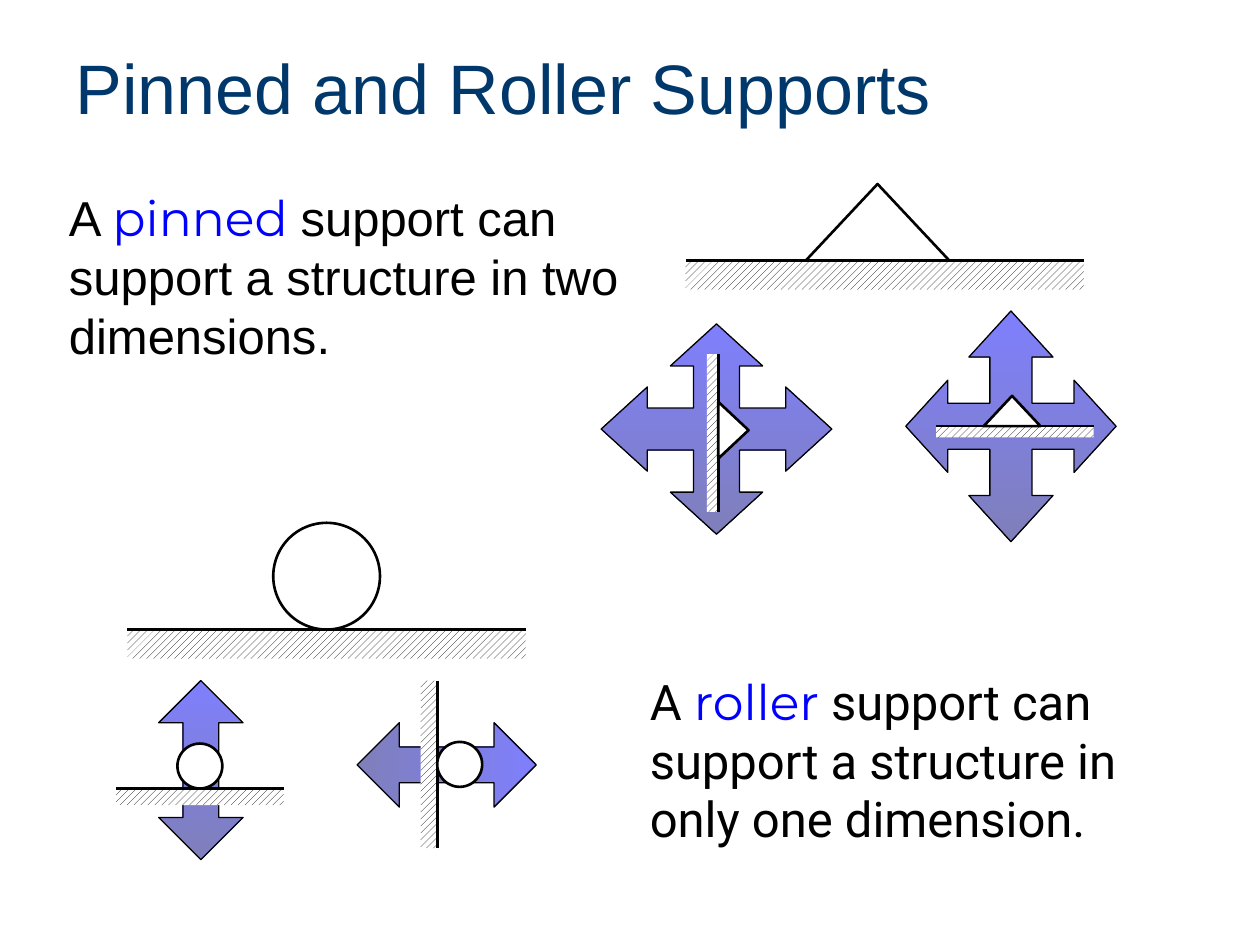
from dataclasses import dataclass

from lxml.etree import SubElement
from pptx import Presentation
from pptx.dml.color import RGBColor
from pptx.enum.dml import MSO_PATTERN
from pptx.enum.shapes import MSO_CONNECTOR, MSO_SHAPE
from pptx.enum.text import MSO_ANCHOR, MSO_AUTO_SIZE, PP_ALIGN
from pptx.oxml.ns import qn
from pptx.util import Cm, Pt


@dataclass(frozen=True)
class Theme:
    """Colours, type sizes and line widths of the slide."""
    title: RGBColor = RGBColor(0x00, 0x38, 0x6B)
    ink: RGBColor = RGBColor(0x00, 0x00, 0x00)
    paper: RGBColor = RGBColor(0xFF, 0xFF, 0xFF)
    term: RGBColor = RGBColor(0x00, 0x00, 0xFF)
    arrow_start: RGBColor = RGBColor(0x00, 0x00, 0xFF)
    arrow_end: RGBColor = RGBColor(0x00, 0x00, 0x76)
    arrow_alpha: str = "50000"
    title_size: Pt = Pt(40)
    text_size: Pt = Pt(28)
    text_leading: Pt = Pt(33.6)
    thin: Pt = Pt(0.75)
    thick: Pt = Pt(1.5)
    title_font: str = "Arial"
    term_font: str = "Montserrat"


@dataclass(frozen=True)
class Box:
    """A region of the slide in centimetres."""
    left: float
    top: float
    width: float
    height: float

    def lengths(self):
        """Return the four measures as slide lengths."""
        return Cm(self.left), Cm(self.top), Cm(self.width), Cm(self.height)


@dataclass(frozen=True)
class Prop:
    """A support's outline, sized and shifted as shares of its ground's length."""
    preset: MSO_SHAPE
    width: float
    height: float
    shift: float


THEME = Theme()
PIN = Prop(MSO_SHAPE.ISOSCELES_TRIANGLE, 0.36, 0.192, -0.018)
ROLLER = Prop(MSO_SHAPE.OVAL, 0.268, 0.268, 0)


def outline(shape, width):
    """Give a shape a plain dark line and no shadow."""
    shape.shadow.inherit = False
    shape.line.color.rgb = THEME.ink
    shape.line.width = width


def add_turnable(slide, preset, center, size, turned):
    """Add a preset shape around a centre, turned clockwise when asked."""
    (x, y), (width, height) = center, size
    box = Box(x - width / 2, y - height / 2, width, height)
    shape = slide.shapes.add_shape(preset, *box.lengths())
    shape.rotation = 90 if turned else 0
    return shape


def shade_arrow(arrow):
    """Fill a movement arrow with the translucent gradient."""
    arrow.fill.gradient()
    arrow.fill.gradient_angle = 270
    for stop, color in zip(arrow.fill.gradient_stops, (THEME.arrow_start, THEME.arrow_end)):
        stop.color.rgb = color
    for color in arrow.element.spPr.iter(qn("a:srgbClr")):
        SubElement(color, qn("a:alpha"), val=THEME.arrow_alpha)
    outline(arrow, THEME.thin)


def add_four_way_arrow(slide, box):
    """Draw a four-headed arrow that fills the box."""
    arm = [(0.5, 0), (0.3, 0.2), (0.4, 0.2), (0.4, 0.4), (0.2, 0.4), (0.2, 0.3)]
    corners = []
    for _ in range(4):
        corners += arm
        arm = [(y, 1 - x) for x, y in arm]
    points = [(Cm(box.left + x * box.width), Cm(box.top + y * box.height)) for x, y in corners]
    builder = slide.shapes.build_freeform(*points[0])
    builder.add_line_segments(points[1:], close=True)
    shade_arrow(builder.convert_to_shape())


def add_two_way_arrow(slide, box):
    """Draw a two-headed arrow along the longer side of the box."""
    center = box.left + box.width / 2, box.top + box.height / 2
    size = sorted((box.width, box.height))
    arrow = add_turnable(slide, MSO_SHAPE.UP_DOWN_ARROW, center, size, box.width > box.height)
    arrow.adjustments[0] = 0.5
    arrow.adjustments[1] = 0.425
    shade_arrow(arrow)


def add_support(slide, box, prop):
    """Draw a prop on hatched ground, with the ground along the longer side."""
    turned = box.height > box.width
    depth, length = sorted((box.width, box.height))
    prop_width, prop_height = prop.width * length, prop.height * length
    ground_depth = depth - prop_height

    def place(along, across):
        """Map a position along and across the ground to the slide."""
        if turned:
            return box.left + box.width - across, box.top + along
        return box.left + along, box.top + across

    ground = add_turnable(slide, MSO_SHAPE.RECTANGLE,
                          place(length / 2, depth - ground_depth / 2),
                          (length, ground_depth), turned)
    ground.shadow.inherit = False
    ground.fill.patterned()
    ground.fill.pattern = MSO_PATTERN.WIDE_UPWARD_DIAGONAL
    ground.fill.fore_color.rgb = THEME.ink
    ground.fill.back_color.rgb = THEME.paper
    ground.line.fill.background()

    ends = place(0, prop_height) + place(length, prop_height)
    surface = slide.shapes.add_connector(MSO_CONNECTOR.STRAIGHT, *map(Cm, ends))
    surface.line.color.rgb = THEME.ink
    surface.line.width = THEME.thick
    SubElement(surface.element.spPr, qn("a:effectLst"))

    body = add_turnable(slide, prop.preset,
                        place((0.5 + prop.shift) * length, prop_height / 2),
                        (prop_width, prop_height), turned)
    body.fill.solid()
    body.fill.fore_color.rgb = THEME.paper
    outline(body, THEME.thick)


def add_definition(slide, box, term, ending, font):
    """Write a sentence that highlights the term it defines."""
    frame = slide.shapes.add_textbox(*box.lengths()).text_frame
    frame.word_wrap = True
    frame.auto_size = MSO_AUTO_SIZE.SHAPE_TO_FIT_TEXT
    sentence = frame.paragraphs[0]
    sentence.font.size = THEME.text_size
    sentence.line_spacing = THEME.text_leading
    for wording, face, color in (("A ", font, THEME.ink),
                                 (term, THEME.term_font, THEME.term),
                                 (ending, font, THEME.ink)):
        run = sentence.add_run()
        run.text = wording
        run.font.name = face
        run.font.color.rgb = color


def add_title(slide, box, wording):
    """Move and format the title placeholder."""
    title = slide.shapes.title
    title.left, title.top, title.width, title.height = box.lengths()
    title.text_frame.text = wording
    title.text_frame.vertical_anchor = MSO_ANCHOR.MIDDLE
    heading = title.text_frame.paragraphs[0]
    heading.alignment = PP_ALIGN.LEFT
    heading.font.name = THEME.title_font
    heading.font.size = THEME.title_size
    heading.font.color.rgb = THEME.title


def build_supports_slide(slide):
    """Lay out the pinned and roller supports with their definitions."""
    add_title(slide, Box(1.27, 0.76, 22.86, 1.98), "Pinned and Roller Supports")
    add_support(slide, Box(13.82, 3.71, 8.03, 2.13), PIN)
    add_definition(slide, Box(1.14, 3.66, 11.76, 3.81), "pinned ",
                   "support can support a structure in two dimensions.", "Arial")
    add_definition(slide, Box(12.85, 13.41, 10.8, 3.81), "roller",
                   " support can support a structure in only one dimension.", "Roboto")
    add_four_way_arrow(slide, Box(12.12, 6.53, 4.65, 4.24))
    add_support(slide, Box(14.25, 7.14, 0.84, 3.18), PIN)
    add_four_way_arrow(slide, Box(18.26, 6.27, 4.24, 4.65))
    add_support(slide, Box(18.87, 7.98, 3.18, 0.84), PIN)
    add_two_way_arrow(slide, Box(3.2, 13.72, 1.7, 3.61))
    add_support(slide, Box(2.34, 14.99, 3.38, 1.24), ROLLER)
    add_two_way_arrow(slide, Box(7.2, 14.57, 3.61, 1.7))
    add_support(slide, Box(8.48, 13.72, 1.24, 3.38), ROLLER)
    add_support(slide, Box(2.57, 10.54, 8.03, 2.74), ROLLER)


def main():
    """Build the presentation and save it."""
    presentation = Presentation()
    presentation.slide_width, presentation.slide_height = Cm(25.4), Cm(19.05)
    build_supports_slide(presentation.slides.add_slide(presentation.slide_layouts[5]))
    presentation.save("out.pptx")


if __name__ == "__main__":
    main()
